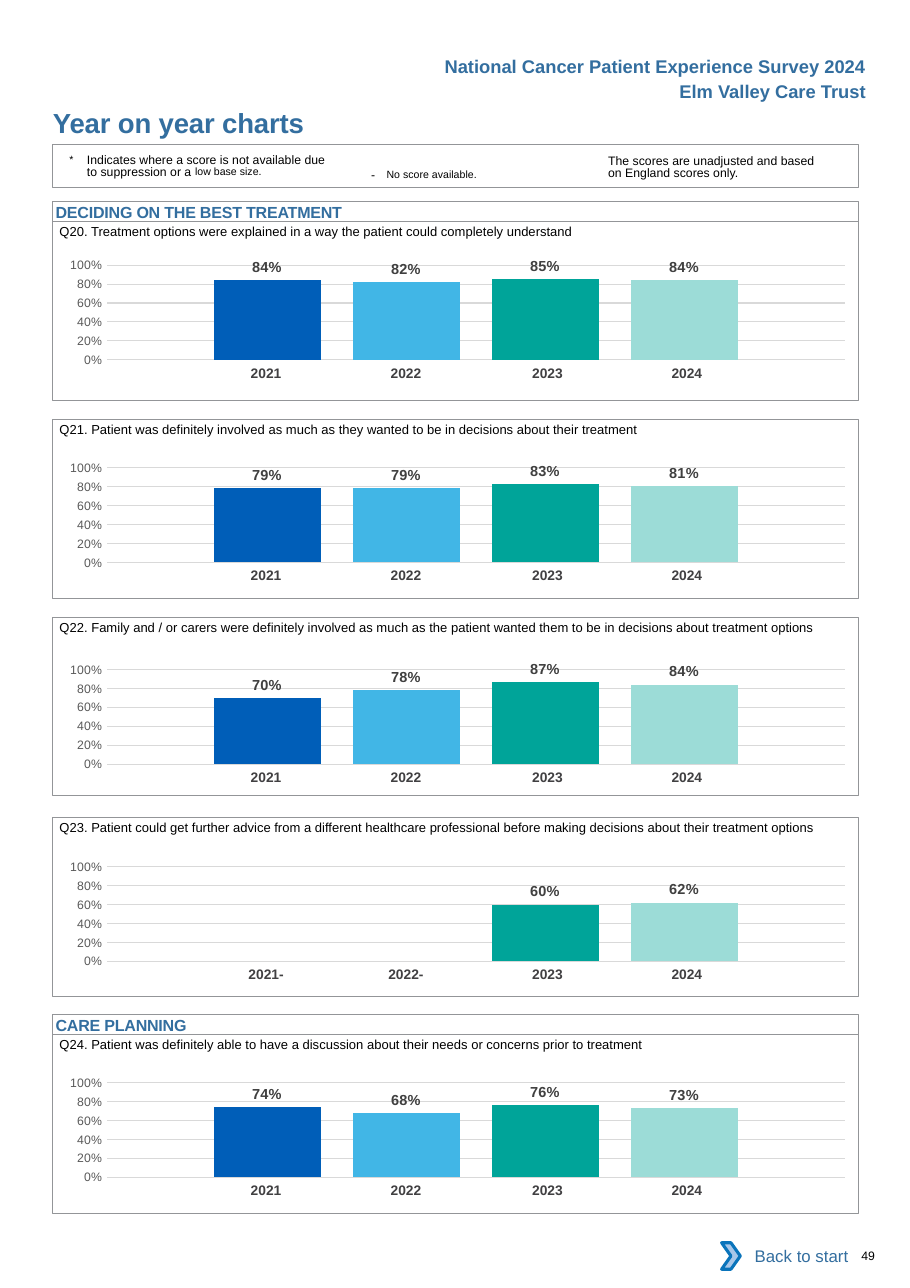
import pptx
import pptx.chart.data
import pptx.dml.color
import pptx.enum.chart
import pptx.enum.shapes
import pptx.enum.text
import pptx.util
import lxml.etree

RGBColor = pptx.dml.color.RGBColor
HEADING_BLUE = RGBColor(0x33, 0x6E, 0x9F)
BLACK = RGBColor(0, 0, 0)
WHITE = RGBColor(0xFF, 0xFF, 0xFF)
BORDER_GREY = RGBColor(0x93, 0x95, 0x98)
GRID_GREY = RGBColor(0xD9, 0xD9, 0xD9)
AXIS_GREY = RGBColor(0x59, 0x59, 0x59)
LABEL_GREY = RGBColor(0x40, 0x40, 0x40)
YEAR_GREY = RGBColor(0x41, 0x40, 0x42)
CHEVRON_FILL = RGBColor(0xA8, 0xC7, 0xE9)
CHEVRON_LINE = RGBColor(0x0A, 0x74, 0xBB)
BAR_COLORS = [RGBColor(0x00, 0x5E, 0xB8), RGBColor(0x41, 0xB6, 0xE6),
              RGBColor(0x00, 0xA4, 0x99), RGBColor(0x9C, 0xDC, 0xD7)]

ALIGN = pptx.enum.text.PP_ALIGN
ANCHOR = pptx.enum.text.MSO_ANCHOR
SHAPE = pptx.enum.shapes.MSO_SHAPE
NO_TABLE_STYLE = "{2D5ABB26-0587-4C30-8999-92F81FD0307C}"

presentation = pptx.Presentation()
presentation.slide_width = pptx.util.Inches(8.26)
presentation.slide_height = pptx.util.Inches(11.69)
slide = presentation.slides.add_slide(presentation.slide_layouts[5])
shapes = slide.shapes

# The page is a grid of 826 columns by 1169 rows
COLUMN = presentation.slide_width / 826
ROW = presentation.slide_height / 1169
PANEL_LEFT, PANEL_WIDTH, PANEL_HEIGHT = 47.5, 732, 162
HEADING_HEIGHT = 18


def place(left, top, width, height):
    return [round(left * COLUMN), round(top * ROW), round(width * COLUMN), round(height * ROW)]


def write(frame, text, size=8, color=BLACK, bold=False, align=ALIGN.LEFT, anchor=ANCHOR.TOP,
          insets=(0, 0, 0, 0), spacing=0, line_spacing=None, hanging=0):
    """Write text, or a list of (text, size, baseline percent) runs, into a frame."""
    frame.word_wrap = True
    frame.auto_size = pptx.enum.text.MSO_AUTO_SIZE.NONE
    frame.vertical_anchor = anchor
    frame.margin_left, frame.margin_top, frame.margin_right, frame.margin_bottom = [
        round(inset * COLUMN) for inset in insets]
    paragraph = frame.paragraphs[0]
    paragraph.alignment = align
    if line_spacing:
        paragraph.line_spacing = pptx.util.Pt(line_spacing)
    if hanging:
        properties = paragraph._p.get_or_add_pPr()
        properties.set("marL", str(round(hanging * COLUMN)))
        properties.set("indent", str(round(-hanging * COLUMN)))
    for words, run_size, baseline in [(text, size, 0)] if isinstance(text, str) else text:
        run = paragraph.add_run()
        run.text = words
        run.font.name = "Arial"
        run.font.size = pptx.util.Pt(run_size)
        run.font.bold = bold
        run.font.color.rgb = color
        properties = run._r.get_or_add_rPr()
        if baseline:
            properties.set("baseline", str(baseline * 1000))
        if spacing:
            properties.set("spc", str(round(spacing * 100)))


# Page header and title
for top, line in [(45, "National Cancer Patient Experience Survey 2024"),
                  (68, "Elm Valley Care Trust")]:
    header = shapes.add_textbox(*place(346, top, 450, 30))
    write(header.text_frame, line, size=12, color=HEADING_BLUE, bold=True, align=ALIGN.RIGHT,
          insets=(10, 5, 10, 5))
title = shapes.title
title.left, title.top, title.width, title.height = place(47, 96, 450, 30)
write(title.text_frame, "Year on year charts", size=18, color=HEADING_BLUE, bold=True,
      insets=(1, 0, 0, 0), spacing=-0.1)

# Notes on the scores
suppression = shapes.add_textbox(*place(63, 138, 240, 27))
write(suppression.text_frame,
      [("*\t", 12, 3), ("Indicates where a score is not available due to suppression or a ", 8, 0),
       ("low base size.", 12, 7)], insets=(0, 3, 0, 0), line_spacing=8.1, hanging=16)
no_score = shapes.add_textbox(*place(327, 141, 183, 24))
write(no_score.text_frame, [("-\t", 8, 0), ("No score available.", 12, 3)],
      insets=(10, 5, 10, 5), hanging=14)
unadjusted = shapes.add_textbox(*place(552, 138, 195, 27))
write(unadjusted.text_frame, "The scores are unadjusted and based on England scores only.",
      insets=(0, 3, 0, 0), line_spacing=8.1)

# Question panels: panel row, chart row, section heading, question, scores
panels = [
    (201, 222, "DECIDING ON THE BEST TREATMENT",
     "Q20. Treatment options were explained in a way the patient could completely understand",
     [0.84, 0.82, 0.85, 0.84]),
    (381, 406, None,
     "Q21. Patient was definitely involved as much as they wanted to be in decisions about "
     "their treatment", [0.79, 0.79, 0.83, 0.81]),
    (560, 589, None,
     "Q22. Family and / or carers were definitely involved as much as the patient wanted them "
     "to be in decisions about treatment options", [0.7, 0.78, 0.87, 0.84]),
    (742, 768, None,
     "Q23. Patient could get further advice from a different healthcare professional before "
     "making decisions about their treatment options", [None, None, 0.6, 0.62]),
    (939, 964, "CARE PLANNING",
     "Q24. Patient was definitely able to have a discussion about their needs or concerns "
     "prior to treatment", [0.74, 0.68, 0.76, 0.73]),
]
frames = [(131, 39, 0.75, None)]
for panel_top, chart_top, heading, question, scores in panels:
    # Bar chart, one series a year
    chart_data = pptx.chart.data.CategoryChartData(number_format="0%")
    chart_data.categories = ["1"]
    for number, score in enumerate(scores, 1):
        chart_data.add_series(f"Series {number}", [score])
    chart = shapes.add_chart(pptx.enum.chart.XL_CHART_TYPE.COLUMN_CLUSTERED,
                             *place(39, chart_top, 732, 129), chart_data).chart
    chart.has_legend = False
    chart.has_title = False
    chart.font.name = "Calibri"
    chart.font.size = pptx.util.Pt(10)
    chart.font.color.rgb = BLACK
    chart.category_axis.visible = False
    axis = chart.value_axis
    axis.minimum_scale, axis.maximum_scale, axis.major_unit = 0, 1, 0.2
    axis.major_tick_mark = pptx.enum.chart.XL_TICK_MARK.NONE
    axis.format.line.fill.background()
    axis.major_gridlines.format.line.color.rgb = GRID_GREY
    axis.major_gridlines.format.line.width = pptx.util.Pt(0.75)
    plot = chart.plots[0]
    plot.gap_width, plot.overlap, plot.vary_by_categories = 200, -30, False
    plot.has_data_labels = True
    labels = plot.data_labels
    labels.show_value = True
    labels.position = pptx.enum.chart.XL_LABEL_POSITION.OUTSIDE_END
    labels.font.bold = True
    for part, size, color in [(axis.tick_labels, 8, AXIS_GREY), (labels, 9.5, LABEL_GREY)]:
        part.number_format = "0%"
        part.number_format_is_linked = False
        part.font.name = "Arial"
        part.font.size = pptx.util.Pt(size)
        part.font.color.rgb = color
    for series, color in zip(plot.series, BAR_COLORS):
        series.format.fill.solid()
        series.format.fill.fore_color.rgb = color

    # Fixed plot area, so that the bars stand over the years
    plot_area = chart._chartSpace.chart.plotArea
    namespace = lxml.etree.QName(plot_area).namespace
    for old_layout in plot_area.findall(f"{{{namespace}}}layout"):
        plot_area.remove(old_layout)
    layout = lxml.etree.Element(f"{{{namespace}}}layout")
    manual = lxml.etree.SubElement(layout, f"{{{namespace}}}manualLayout")
    for tag, value in [("layoutTarget", "inner"), ("xMode", "edge"), ("yMode", "edge"),
                       ("x", "0.079"), ("y", "0.145"), ("w", "0.915"), ("h", "0.666")]:
        lxml.etree.SubElement(manual, f"{{{namespace}}}{tag}").set("val", value)
    plot_area.insert(0, layout)

    # Years under the bars, with a dash where there is no score
    table = shapes.add_table(1, 4, *place(173, chart_top + 105, 515, 27)).table
    table.first_row = table.horz_banding = False
    table._tbl.tblPr.find(pptx.oxml.ns.qn("a:tableStyleId")).text = NO_TABLE_STYLE
    for index, (width, right_inset) in enumerate([(127, 0), (127, 0), (134, 4), (127, 12)]):
        table.columns[index].width = round(width * COLUMN)
        cell = table.cell(0, index)
        cell.fill.background()
        year = f"{2021 + index}" + ("-" if scores[index] is None else "")
        write(cell.text_frame, year, size=9, color=YEAR_GREY, bold=True, align=ALIGN.CENTER)
        cell.margin_left, cell.margin_right = round(10 * COLUMN), round(right_inset * COLUMN)
        cell.margin_top = cell.margin_bottom = round(5 * ROW)

    question_box = shapes.add_textbox(*place(54, panel_top - 7, 726, 24))
    write(question_box.text_frame, question, size=8.5, insets=(0, 9, 0, 0))
    frames.append((panel_top, PANEL_HEIGHT, 0.5, None))
    if heading:
        frames.append((panel_top - HEADING_HEIGHT, HEADING_HEIGHT, 0.5, heading))

# Outlines of the notes, panels and section headings
for top, height, line_width, heading in frames:
    outline = shapes.add_shape(SHAPE.RECTANGLE, *place(PANEL_LEFT, top, PANEL_WIDTH, height))
    outline.shadow.inherit = False
    outline.fill.background()
    outline.line.color.rgb = BORDER_GREY
    outline.line.width = pptx.util.Pt(line_width)
    if heading:
        write(outline.text_frame, heading, size=10.5, color=HEADING_BLUE, bold=True,
              insets=(3, 1, 0, 0), spacing=-0.1)

# Footer: way back and page number
back = shapes.add_shape(SHAPE.RECTANGLE, *place(662, 1119, 118, 42))
back.line.fill.background()
chevron = shapes.add_shape(SHAPE.CHEVRON, *place(655, 1128, 17, 24))
chevron.line.color.rgb = CHEVRON_LINE
chevron.line.width = pptx.util.Pt(2)
for shape, color in [(back, WHITE), (chevron, CHEVRON_FILL)]:
    shape.shadow.inherit = False
    shape.fill.solid()
    shape.fill.fore_color.rgb = color
write(back.text_frame, "Back to start", size=11, color=HEADING_BLUE, align=ALIGN.RIGHT,
      anchor=ANCHOR.MIDDLE, insets=(10, 5, 10, 5))
page_number = shapes.add_textbox(*place(772, 1133, 51, 13))
write(page_number.text_frame, "49", insets=(10, 0, 0, 0))

presentation.save("out.pptx")
